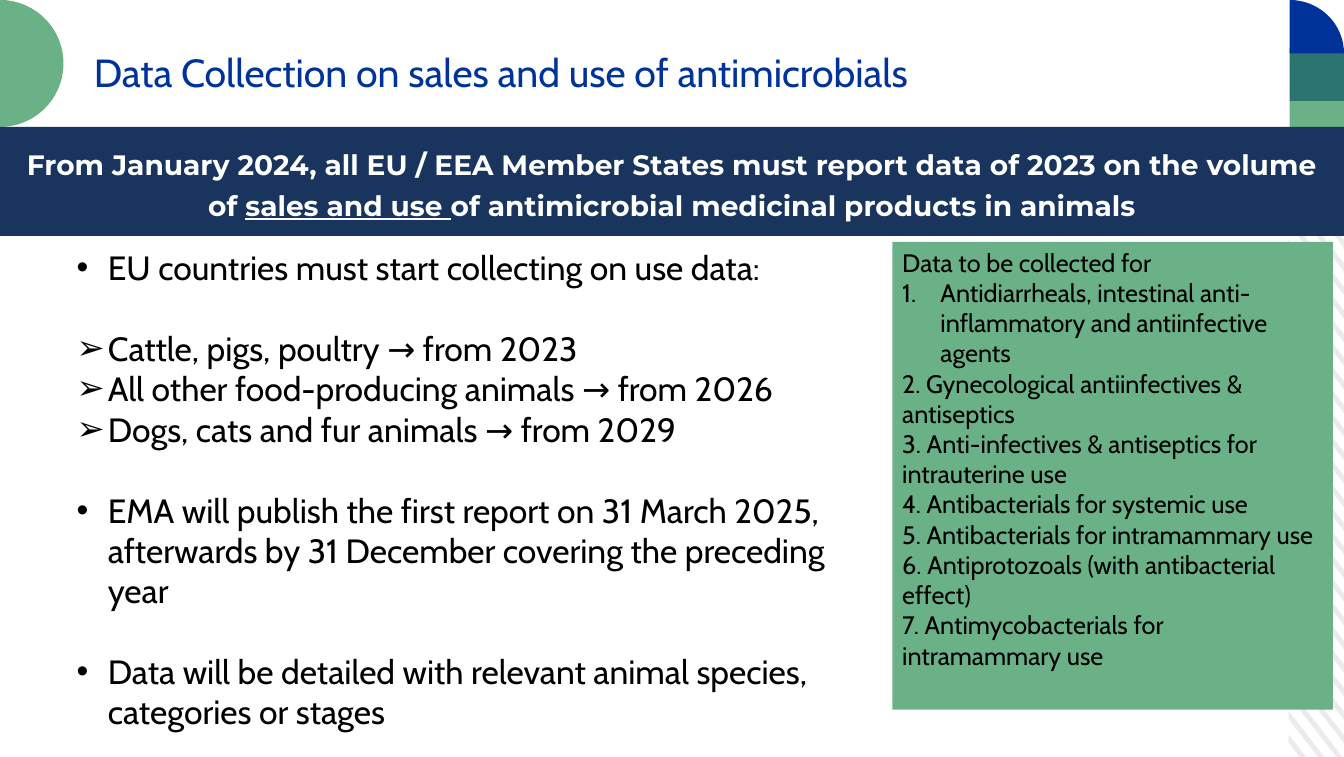
"""Build a slide on the reporting of antimicrobial sales and use."""
from dataclasses import dataclass
from math import cos, radians, sin

from lxml import etree
from pptx import Presentation
from pptx.dml.color import RGBColor
from pptx.enum.shapes import MSO_SHAPE
from pptx.enum.text import MSO_ANCHOR, MSO_AUTO_SIZE, PP_ALIGN
from pptx.oxml.ns import qn
from pptx.util import Inches, Pt

RECT = MSO_SHAPE.RECTANGLE
TOP, MIDDLE = MSO_ANCHOR.TOP, MSO_ANCHOR.MIDDLE
LEFT, CENTER = PP_ALIGN.LEFT, PP_ALIGN.CENTER
FIXED = MSO_AUTO_SIZE.NONE
COLORS = {
    "navy": "19355D", "blue": "003399", "teal": "2C7470", "green": "6BB188",
    "stripe": "ECEBEB", "white": "FFFFFF", "black": "000000",
}
WIDTH, HEIGHT = 13.33, 7.51
HEAD = 1.54
EDGE = 12.78
UNITS = 1000


@dataclass
class Box:
    """Place and size in inches."""
    left: float
    top: float
    width: float
    height: float


@dataclass
class Item:
    """One paragraph with its bullet, hanging indent and space before."""
    text: str
    mark: str = ""
    indent: float = 0
    gap: float = 0


@dataclass
class Style:
    """Look of a text."""
    font: str
    size: float
    color: str
    bold: bool = False


TITLE = Style("Cabin", 28, "blue")
BODY = Style("Cabin", 24, "black")
PANEL = Style("Cabin", 18, "black")
BANNER = Style("Montserrat", 20, "white", True)

POINTS = [
    Item("EU countries must start collecting on use data:", "•", 0.31),
    Item("Cattle, pigs, poultry → from 2023", "➢", 0.31, 29),
    Item("All other food-producing animals → from 2026", "➢", 0.31),
    Item("Dogs, cats and fur animals → from 2029", "➢", 0.31),
    Item("EMA will publish the first report on 31 March 2025, afterwards by "
         "31 December covering the preceding year", "•", 0.31, 29),
    Item("Data will be detailed with relevant animal species, categories or stages",
         "•", 0.31, 29),
]
GROUPS = [
    Item("Data to be collected for"),
    Item("Antidiarrheals, intestinal anti-inflammatory and antiinfective agents",
         "1.", 0.38),
    Item("2. Gynecological antiinfectives & antiseptics"),
    Item("3. Anti-infectives & antiseptics for intrauterine use"),
    Item("4. Antibacterials for systemic use\n5. Antibacterials for intramammary use"),
    Item("6. Antiprotozoals (with antibacterial effect)"),
    Item("7. Antimycobacterials for intramammary use"),
]
PARTS = ["From January 2024, all EU / EEA Member States must report data of 2023 "
         "on the volume of ", "sales and use ",
         "of antimicrobial medicinal products in animals"]


def tint(name: str) -> RGBColor:
    """Return a named colour."""
    return RGBColor.from_string(COLORS[name])


def paint(shape, color: str) -> None:
    """Give a shape a flat fill with no line or shadow."""
    shape.shadow.inherit = False
    shape.fill.solid()
    shape.fill.fore_color.rgb = tint(color)
    shape.line.fill.background()


def place(shape, box: Box) -> None:
    """Move and size a shape."""
    shape.left, shape.top = Inches(box.left), Inches(box.top)
    shape.width, shape.height = Inches(box.width), Inches(box.height)


def block(slide, box: Box, color: str):
    """Draw a plain rectangle."""
    shape = slide.shapes.add_shape(RECT, 0, 0, 0, 0)
    place(shape, box)
    paint(shape, color)
    return shape


def outline(slide, loops: list, color: str) -> None:
    """Draw closed loops of points as one filled shape."""
    loops = [[(round(x * UNITS), round(y * UNITS)) for x, y in loop] for loop in loops]
    pen = slide.shapes.build_freeform(*loops[0][0], scale=Inches(1) / UNITS)
    for loop in loops:
        pen.move_to(*loop[0])
        pen.add_line_segments(loop[1:], close=True)
    paint(pen.convert_to_shape(), color)


def sector(x: float, y: float, wide: float, high: float, end: int) -> list:
    """Return a disc sector from straight up to the end angle."""
    turns = [radians(angle) for angle in range(-90, end + 1, 3)]
    return [(x, y)] + [(x + wide * cos(t), y + high * sin(t)) for t in turns]


def stripes() -> list:
    """Return slanted bands cut to the right margin."""
    step, thick, rise = 0.234, 0.08, 0.71
    slope = rise / (WIDTH - EDGE)

    def cut(start: float, x: float) -> tuple:
        """Return the edge point at x, held between head and foot."""
        y = min(max(start + slope * (x - EDGE), HEAD), HEIGHT)
        return EDGE + (y - start) / slope, y

    bands = []
    for i in range(-3, 25):
        upper = 1.67 + step * i
        lower = upper + thick
        bands.append([cut(upper, EDGE), cut(upper, WIDTH),
                      cut(lower, WIDTH), cut(lower, EDGE)])
    return bands


def bullet(para, item: Item) -> None:
    """Set the hanging indent and bullet of a paragraph."""
    props = para._p.get_or_add_pPr()
    props.set("marL", str(Inches(item.indent)))
    props.set("indent", str(-Inches(item.indent)))
    if not item.mark:
        etree.SubElement(props, qn("a:buNone"))
    elif item.mark == "1.":
        etree.SubElement(props, qn("a:buAutoNum"), type="arabicPeriod")
    else:
        etree.SubElement(props, qn("a:buFont"), typeface="Arial")
        etree.SubElement(props, qn("a:buChar"), char=item.mark)


def ink(para, style: Style) -> None:
    """Format every run of a paragraph."""
    for run in para.runs:
        font = run.font
        font.name, font.size, font.bold = style.font, Pt(style.size), style.bold
        font.color.rgb = tint(style.color)


def write(shape, items: list[Item], style: Style) -> None:
    """Fill a shape with left-aligned paragraphs."""
    frame = shape.text_frame
    frame.word_wrap, frame.auto_size = True, FIXED
    frame.vertical_anchor = TOP
    for i, item in enumerate(items):
        para = frame.add_paragraph() if i else frame.paragraphs[0]
        para.text = item.text
        bullet(para, item)
        para.alignment = LEFT
        para.space_before = Pt(item.gap)
        ink(para, style)


def banner(slide) -> None:
    """Draw the statement across the slide."""
    shape = block(slide, Box(0, 1.26, WIDTH, 1.08), "navy")
    frame = shape.text_frame
    frame.word_wrap, frame.vertical_anchor = True, MIDDLE
    para = frame.paragraphs[0]
    para.alignment, para.line_spacing = CENTER, 1.2
    for part in PARTS:
        para.add_run().text = part
    ink(para, BANNER)
    para.runs[1].font.underline = True


def main() -> None:
    """Build and save the slide."""
    deck = Presentation()
    deck.slide_width, deck.slide_height = Inches(WIDTH), Inches(HEIGHT)
    slide = deck.slides.add_slide(deck.slide_layouts[1])
    title, body = slide.placeholders
    outline(slide, stripes(), "stripe")
    block(slide, Box(12.79, 0.48, 0.54, 0.53), "teal")
    block(slide, Box(12.79, 1.01, 0.54, 0.53), "green")
    outline(slide, [sector(12.79, 0.53, 0.54, 0.53, 0)], "blue")
    outline(slide, [sector(0, 0.63, 0.63, 0.63, 90)], "green")
    banner(slide)
    place(title, Box(0.83, 0.34, 11.25, 0.58))
    write(title, [Item("Data Collection on sales and use of antimicrobials")], TITLE)
    title.text_frame.paragraphs[0].line_spacing = 1.2
    place(body, Box(0.66, 2.4, 8.05, 5.05))
    write(body, POINTS, BODY)
    write(block(slide, Box(8.85, 2.4, 4.37, 4.64), "green"), GROUPS, PANEL)
    deck.save("out.pptx")


if __name__ == "__main__":
    main()
